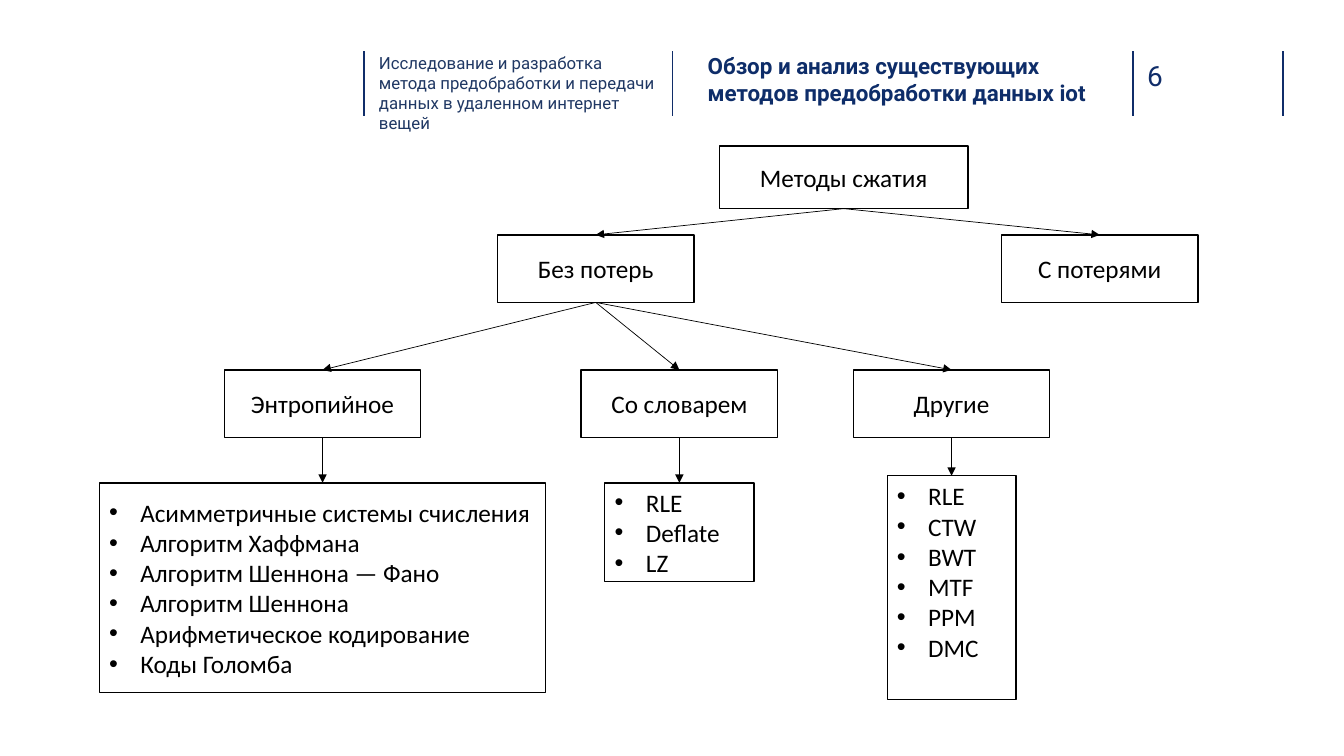
from pptx import Presentation
from pptx.dml.color import RGBColor
from pptx.enum.shapes import MSO_CONNECTOR, MSO_SHAPE
from pptx.enum.text import MSO_ANCHOR, MSO_AUTO_SIZE, PP_ALIGN
from pptx.oxml.ns import qn
from pptx.util import Inches, Pt
from lxml import etree

RECT = MSO_SHAPE.RECTANGLE
LINE = MSO_CONNECTOR.STRAIGHT
TOP, MID = MSO_ANCHOR.TOP, MSO_ANCHOR.MIDDLE
LEFT, CENTER = PP_ALIGN.LEFT, PP_ALIGN.CENTER
FIXED = MSO_AUTO_SIZE.NONE

COLORS = {"ink": "000000", "rule": "102D69", "topic": "203864", "title": "0E2D69"}
COLS, ROWS = 133.33, 75
BOTTOM, HEAD = 2, 0  # connection sites of a rectangle


class Deck:
    body, head = "Calibri", "Roboto"

    def __init__(self):
        self.prs = Presentation()
        self.prs.slide_width = Inches(13.33)
        self.prs.slide_height = Inches(7.5)
        self.slide = self.prs.slides.add_slide(self.prs.slide_layouts[5])
        self.shapes = self.slide.shapes

    def x(self, col):
        return int(self.prs.slide_width * col / COLS)

    def y(self, row):
        return int(self.prs.slide_height * row / ROWS)

    def area(self, col, row, wide, high):
        return self.x(col), self.y(row), self.x(wide), self.y(high)

    def color(self, name):
        return RGBColor.from_string(COLORS[name])

    def letter(self, shape, lines, font, size, color, bold=False, align=LEFT, dots=False):
        frame = shape.text_frame
        frame.word_wrap = True
        frame.auto_size = FIXED
        frame.text = "\n".join(lines)
        for para in frame.paragraphs:
            para.alignment = align
            para.line_spacing = 1.0
            if dots:
                props = para._p.get_or_add_pPr()
                props.set("marL", str(Inches(0.31)))
                props.set("indent", str(-Inches(0.31)))
                etree.SubElement(props, qn("a:buFont")).set("typeface", "Arial")
                etree.SubElement(props, qn("a:buChar")).set("char", "•")
            for run in para.runs:
                run.font.name = font
                run.font.size = Pt(size)
                run.font.bold = bold
                run.font.color.rgb = self.color(color)

    def bare(self, shape):
        frame = shape.text_frame
        frame.margin_left = frame.margin_right = 0
        frame.margin_top = frame.margin_bottom = 0
        frame.vertical_anchor = TOP

    def title(self, text, *area):
        shape = self.shapes.title
        shape.left, shape.top, shape.width, shape.height = self.area(*area)
        self.bare(shape)
        self.letter(shape, [text], self.head, 16, "title", bold=True)

    def label(self, text, size, color, *area):
        shape = self.shapes.add_textbox(*self.area(*area))
        self.bare(shape)
        self.letter(shape, [text], self.head, size, color)

    def box(self, lines, mid, row, wide, high, dots=False, anchor=MID, width=1):
        """Outlined box centred on the column mid."""
        shape = self.shapes.add_shape(RECT, *self.area(mid - wide / 2, row, wide, high))
        shape.shadow.inherit = False
        shape.fill.background()
        shape.line.color.rgb = self.color("ink")
        shape.line.width = Pt(width)
        shape.text_frame.vertical_anchor = anchor
        self.letter(shape, lines, self.body, 18, "ink",
                    align=LEFT if dots else CENTER, dots=dots)
        return shape

    def stroke(self, start, end, color, width):
        line = self.shapes.add_connector(LINE, *start, *end)
        line.line.color.rgb = self.color(color)
        line.line.width = Pt(width)
        etree.SubElement(line._element.spPr, qn("a:effectLst"))
        return line

    def rule(self, col):
        self.stroke((self.x(col), self.y(5.1)), (self.x(col), self.y(11.5)), "rule", 1)

    def link(self, top, low):
        line = self.stroke((0, 0), (0, 0), "ink", 0.5)
        line.begin_connect(top, BOTTOM)
        line.end_connect(low, HEAD)
        tail = etree.SubElement(line._element.spPr.find(qn("a:ln")), qn("a:tailEnd"))
        tail.set("type", "triangle")


def main():
    deck = Deck()

    # Header
    for col in (36.1, 66.7, 112.4, 127.3):
        deck.rule(col)
    deck.label("Исследование и разработка метода предобработки и передачи данных "
               "в удаленном интернет вещей", 12, "topic", 37.6, 5.2, 28, 5.3)
    deck.title("Обзор и анализ существующих методов предобработки данных iot",
               70.2, 5.2, 37.9, 5.4)
    deck.label("6", 20, "rule", 113.8, 5.8, 7.3, 3.4)

    # Upper levels of the tree
    root = deck.box(["Методы сжатия"], 83.7, 14.5, 24.7, 6.2)
    exact, lossy = [deck.box([name], mid, 23.3, 19.5, 6.7)
                    for name, mid in (("Без потерь", 59.1), ("С потерями", 109.1))]
    deck.link(root, exact)
    deck.link(root, lossy)

    # Lossless families, each with its list of methods:
    # name, centre column, list row, width, height, anchor, outline, methods
    groups = [
        ("Энтропийное", 32, 47.9, 44.3, 20.8, MID, 1,
         ["Асимметричные системы счисления", "Алгоритм Хаффмана",
          "Алгоритм Шеннона — Фано", "Алгоритм Шеннона",
          "Арифметическое кодирование", "Коды Голомба"]),
        ("Со словарем", 67.4, 47.9, 14.8, 9.8, MID, 1, ["RLE", "Deflate", "LZ"]),
        ("Другие", 94.4, 47.2, 12.8, 22.2, TOP, 0.75,
         ["RLE", "CTW", "BWT", "MTF", "PPM", "DMC"]),
    ]
    for name, mid, row, wide, high, anchor, width, items in groups:
        group = deck.box([name], mid, 36.7, 19.5, 6.7)
        methods = deck.box(items, mid, row, wide, high, True, anchor, width)
        deck.link(exact, group)
        deck.link(group, methods)

    deck.prs.save("out.pptx")


if __name__ == "__main__":
    main()
